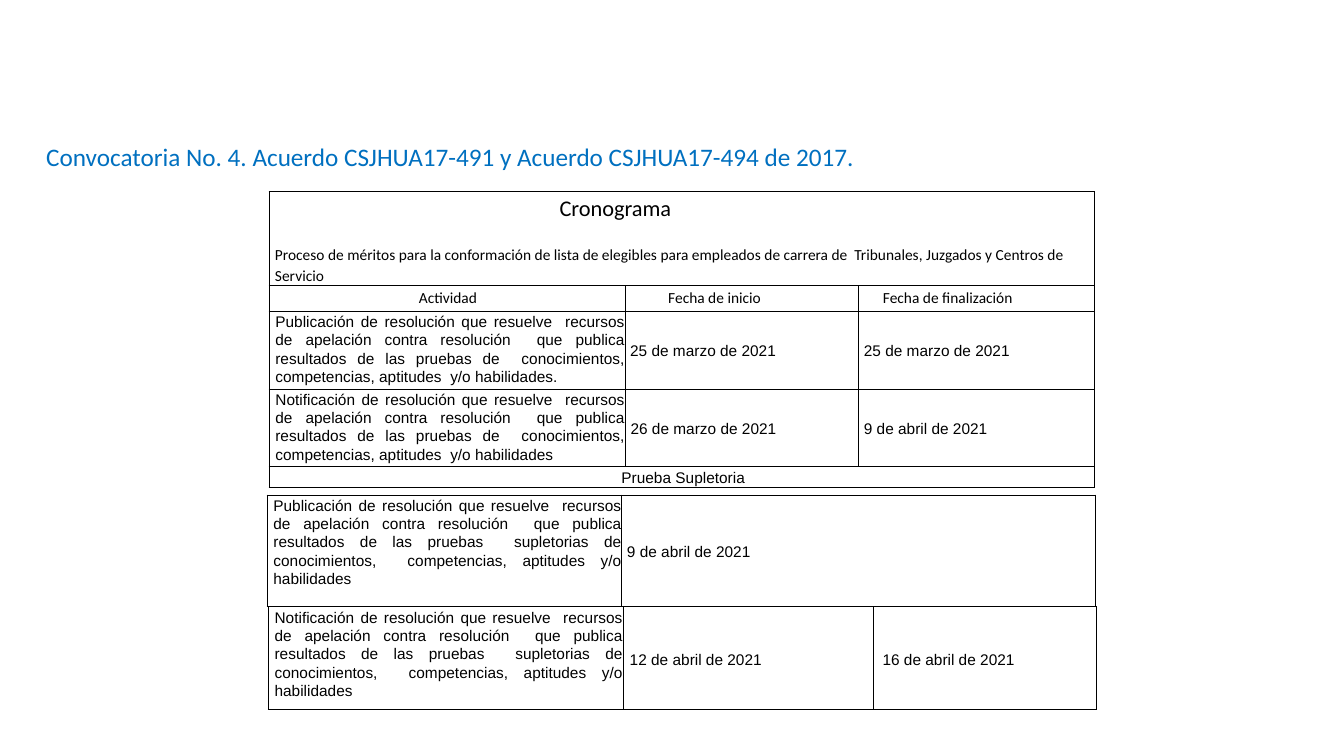
"""Builds the slide with the schedule of the merit process."""
from lxml import etree
from pptx import Presentation
from pptx.dml.color import RGBColor
from pptx.enum.text import MSO_ANCHOR, PP_ALIGN
from pptx.oxml.ns import qn
from pptx.util import Cm, Pt

LEFT, CENTER, JUSTIFY = PP_ALIGN.LEFT, PP_ALIGN.CENTER, PP_ALIGN.JUSTIFY
TOP, MIDDLE = MSO_ANCHOR.TOP, MSO_ANCHOR.MIDDLE
TITLE_ONLY = 5
COLORS = {"heading": "0070C0", "text": "000000", "border": "000000"}

HEADING = "Convocatoria No. 4. Acuerdo CSJHUA17-491 y Acuerdo CSJHUA17-494 de 2017."
PROCESS = ("Proceso de méritos para la conformación de lista de elegibles para "
           "empleados de carrera de  Tribunales, Juzgados y Centros de Servicio")
APPEAL = ("{} de resolución que resuelve  recursos de apelación contra resolución  "
          "que publica resultados de las pruebas ")
REGULAR = APPEAL + "de  conocimientos, competencias, aptitudes  y/o habilidades"
MAKEUP = APPEAL + " supletorias de conocimientos,  competencias, aptitudes y/o habilidades"


def set_font(paragraph, size=11, name="Arial", color="text"):
    """Format the font of a whole paragraph."""
    font = paragraph.font
    font.size = Pt(size)
    font.name = name
    font.bold = False
    font.color.rgb = RGBColor.from_string(COLORS[color])


def add_heading(slide):
    """Place the heading in the title placeholder."""
    heading = slide.shapes.title
    heading.left, heading.top = Cm(0.91), Cm(3.51)
    heading.width, heading.height = Cm(31.06), Cm(1)
    frame = heading.text_frame
    frame.text = HEADING
    frame.word_wrap = True
    frame.vertical_anchor = TOP
    line = frame.paragraphs[0]
    line.alignment = LEFT
    line.line_spacing = 0.9
    set_font(line, 18, "Calibri", "heading")


def draw_borders(cell):
    """Give a cell no fill and a thin line on each side."""
    cell.fill.background()
    properties = cell._tc.get_or_add_tcPr()
    for position, side in enumerate(("lnL", "lnR", "lnT", "lnB")):
        border = etree.Element(qn("a:" + side), w=str(Pt(0.5)))
        fill = etree.SubElement(border, qn("a:solidFill"))
        etree.SubElement(fill, qn("a:srgbClr"), val=COLORS["border"])
        properties.insert(position, border)


def add_grid(slide, left, top, widths, heights):
    """Add a plain bordered table, with measures in centimetres."""
    frame = slide.shapes.add_table(len(heights), len(widths), Cm(left), Cm(top),
                                   Cm(sum(widths)), Cm(sum(heights)))
    table = frame.table
    table.first_row = table.horz_banding = False
    for column, width in zip(table.columns, widths):
        column.width = Cm(width)
    for row, height in zip(table.rows, heights):
        row.height = Cm(height)
    for cell in table.iter_cells():
        draw_borders(cell)
    return table


def write_cell(cell, text, indent=0, align=LEFT, anchor=TOP, inset=0.08, font="Arial"):
    """Write one paragraph into a cell and return it."""
    cell.margin_left, cell.margin_top = Cm(indent), Cm(inset)
    cell.margin_right = cell.margin_bottom = 0
    cell.vertical_anchor = anchor
    cell.text = text
    paragraph = cell.text_frame.paragraphs[0]
    paragraph.alignment = align
    set_font(paragraph, name=font)
    return paragraph


def write_activity(row, activity, dates, indents):
    """Fill a row with an activity and its dates."""
    description = write_cell(row.cells[0], activity, 0.16, JUSTIFY, inset=0.03)
    description.line_spacing = 1.07
    for cell, date, indent in zip(list(row.cells)[1:], dates, indents):
        write_cell(cell, date, indent, anchor=MIDDLE)


def write_banner(cell):
    """Write the schedule title and the description of the process."""
    schedule = write_cell(cell, "Cronograma", 0.15, font="Calibri")
    schedule._p.get_or_add_pPr().set("marL", str(Cm(7.17)))
    set_font(schedule, 16, "Calibri")
    process = cell.text_frame.add_paragraph()
    process.text = PROCESS
    process.space_before = Pt(16)
    process.line_spacing = Pt(14.5)
    set_font(process, name="Calibri")


def add_schedule(slide):
    """Add the main schedule table."""
    table = add_grid(slide, 6.78, 4.83, (8.97, 5.89, 5.94), (2.36, 0.65, 1.96, 1.96, 0.52))
    for row in (0, 4):
        table.cell(row, 0).merge(table.cell(row, 2))
    write_banner(table.cell(0, 0))
    headers = (("Actividad", 0.05, CENTER), ("Fecha de inicio", 1.09, LEFT),
               ("Fecha de finalización", 0.61, LEFT))
    for column, (header, indent, align) in enumerate(headers):
        write_cell(table.cell(1, column), header, indent, align, font="Calibri")
    write_activity(table.rows[2], REGULAR.format("Publicación") + ".",
                   ("25 de marzo de 2021", "25 de marzo de 2021"), (0.13, 0.13))
    write_activity(table.rows[3], REGULAR.format("Notificación"),
                   ("26 de marzo de 2021", "9 de abril de 2021"), (0.14, 0.13))
    write_cell(table.cell(4, 0), "Prueba Supletoria", 0.08, CENTER)


def main():
    """Build and save the slide."""
    deck = Presentation()
    deck.slide_width, deck.slide_height = Cm(33.87), Cm(19.05)
    slide = deck.slides.add_slide(deck.slide_layouts[TITLE_ONLY])
    add_heading(slide)
    add_schedule(slide)
    publication = add_grid(slide, 6.73, 12.47, (8.94, 11.93), (2.82,))
    write_activity(publication.rows[0], MAKEUP.format("Publicación"),
                   ("9 de abril de 2021",), (0.13,))
    notification = add_grid(slide, 6.76, 15.29, (8.94, 6.32, 5.61), (2.59,))
    write_activity(notification.rows[0], MAKEUP.format("Notificación"),
                   ("12 de abril de 2021", "16 de abril de 2021"), (0.17, 0.22))
    deck.save("out.pptx")


if __name__ == "__main__":
    main()
